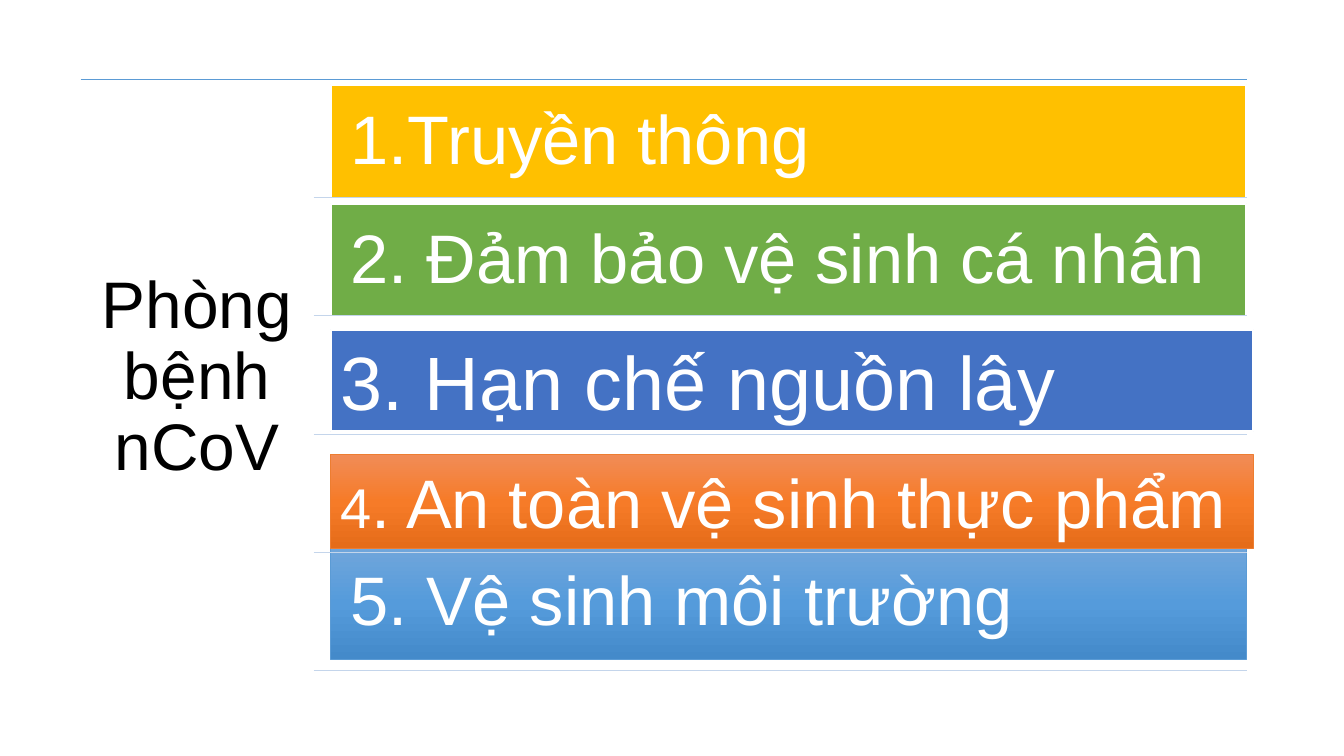
import copy
from dataclasses import dataclass

import pptx
import pptx.dml.color
import pptx.enum.shapes
import pptx.enum.text
import pptx.oxml.ns
import pptx.util

EMU_PER_PX = 9144


@dataclass(frozen=True)
class Theme:
    font: str = "Arial"
    white: str = "FFFFFF"
    black: str = "000000"
    top_rule: str = "5B9BD5"
    row_rule: str = "C4D5EB"
    yellow: tuple = ("FFC000",)
    green: tuple = ("70AD47",)
    indigo: tuple = ("4472C4",)
    orange: tuple = ("F18C57", "F67B28", "E56C19")
    orange_edge: str = "ED7D31"
    blue: tuple = ("71A6DB", "559BDB", "448ACA")
    blue_edge: str = "5B9BD5"
    title_size: int = 47
    item_size: int = 49
    large_size: int = 54
    small_size: int = 40


THEME = Theme()


def px(value):
    return pptx.util.Emu(value * EMU_PER_PX)


def rgb(value):
    return pptx.dml.color.RGBColor.from_string(value)


def format_run(run, size, color):
    run.font.name = THEME.font
    run.font.size = pptx.util.Pt(size)
    run.font.color.rgb = rgb(color)


def set_insets(text_frame, horizontal, vertical):
    text_frame.margin_left = text_frame.margin_right = px(horizontal)
    text_frame.margin_top = text_frame.margin_bottom = px(vertical)


def add_rule(slide, left, right, y, color):
    connector = slide.shapes.add_connector(
        pptx.enum.shapes.MSO_CONNECTOR.STRAIGHT, px(left), px(y), px(right), px(y))
    connector.line.color.rgb = rgb(color)
    connector.line.width = pptx.util.Pt(1)
    properties = connector._element.spPr
    properties.append(properties.makeelement(pptx.oxml.ns.qn("a:effectLst"), {}))


def add_title(slide, text):
    box = slide.shapes.add_textbox(px(80), px(79), px(231), px(593))
    text_frame = box.text_frame
    text_frame.word_wrap = True
    text_frame.vertical_anchor = pptx.enum.text.MSO_ANCHOR.MIDDLE
    set_insets(text_frame, 20, 20)
    text_frame.text = text
    paragraph = text_frame.paragraphs[0]
    paragraph.alignment = pptx.enum.text.PP_ALIGN.CENTER
    paragraph.line_spacing = 0.9
    format_run(paragraph.runs[0], THEME.title_size, THEME.black)


def fill_shape(shape, colors):
    if len(colors) == 1:
        shape.fill.solid()
        shape.fill.fore_color.rgb = rgb(colors[0])
        return
    shape.fill.gradient()
    shape.fill.gradient_angle = 270
    stop_list = shape._element.spPr.find(".//" + pptx.oxml.ns.qn("a:gsLst"))
    stop_list.insert(1, copy.deepcopy(stop_list[0]))
    for index, (stop, color) in enumerate(zip(shape.fill.gradient_stops, colors)):
        stop.position = index / (len(colors) - 1)
        stop.color.rgb = rgb(color)


def add_bar(slide, top, width, height, colors, edge, parts):
    shape = slide.shapes.add_shape(
        pptx.enum.shapes.MSO_SHAPE.RECTANGLE, px(328), px(top), px(width), px(height))
    shape.shadow.inherit = False
    fill_shape(shape, colors)
    shape.line.color.rgb = rgb(edge)
    shape.line.width = pptx.util.Pt(1.5 if len(colors) == 1 else 0.5)
    text_frame = shape.text_frame
    text_frame.word_wrap = True
    text_frame.vertical_anchor = pptx.enum.text.MSO_ANCHOR.TOP
    paragraph = text_frame.paragraphs[0]
    paragraph.alignment = pptx.enum.text.PP_ALIGN.LEFT
    for text, size in parts:
        run = paragraph.add_run()
        run.text = text
        format_run(run, size, THEME.white)
    return shape


def add_list_bar(slide, top, colors, edge, text):
    shape = add_bar(slide, top, 908, 112, colors, edge, [(text, THEME.item_size)])
    set_insets(shape.text_frame, 20, 20)
    shape.text_frame.paragraphs[0].line_spacing = 0.9


def add_fitted_bar(slide, top, height, colors, edge, parts):
    shape = add_bar(slide, top, 915, height, colors, edge, parts)
    set_insets(shape.text_frame, 10, 5)
    shape.text_frame.auto_size = pptx.enum.text.MSO_AUTO_SIZE.SHAPE_TO_FIT_TEXT


def main():
    presentation = pptx.Presentation()
    presentation.slide_width = px(1333)
    presentation.slide_height = px(750)
    slide = presentation.slides.add_slide(presentation.slide_layouts[6])

    add_rule(slide, 80, 1237, 79, THEME.top_rule)
    add_title(slide, "Phòng bệnh nCoV")
    add_list_bar(slide, 84, THEME.yellow, THEME.white, "1.Truyền thông")
    add_list_bar(slide, 202, THEME.green, THEME.white, "2. Đảm bảo vệ sinh cá nhân")
    add_list_bar(slide, 542, THEME.blue, THEME.blue_edge, "5. Vệ sinh môi trường")
    for row in range(5):
        add_rule(slide, 311, 1237, 196 + round(117.3 * row), THEME.row_rule)
    add_fitted_bar(slide, 327, 101, THEME.indigo, THEME.white,
                   [("3. Hạn chế nguồn lây", THEME.large_size)])
    add_fitted_bar(slide, 451, 93, THEME.orange, THEME.orange_edge,
                   [("4", THEME.small_size),
                    (". An toàn vệ sinh thực phẩm", THEME.item_size)])
    presentation.save("out.pptx")


if __name__ == "__main__":
    main()
